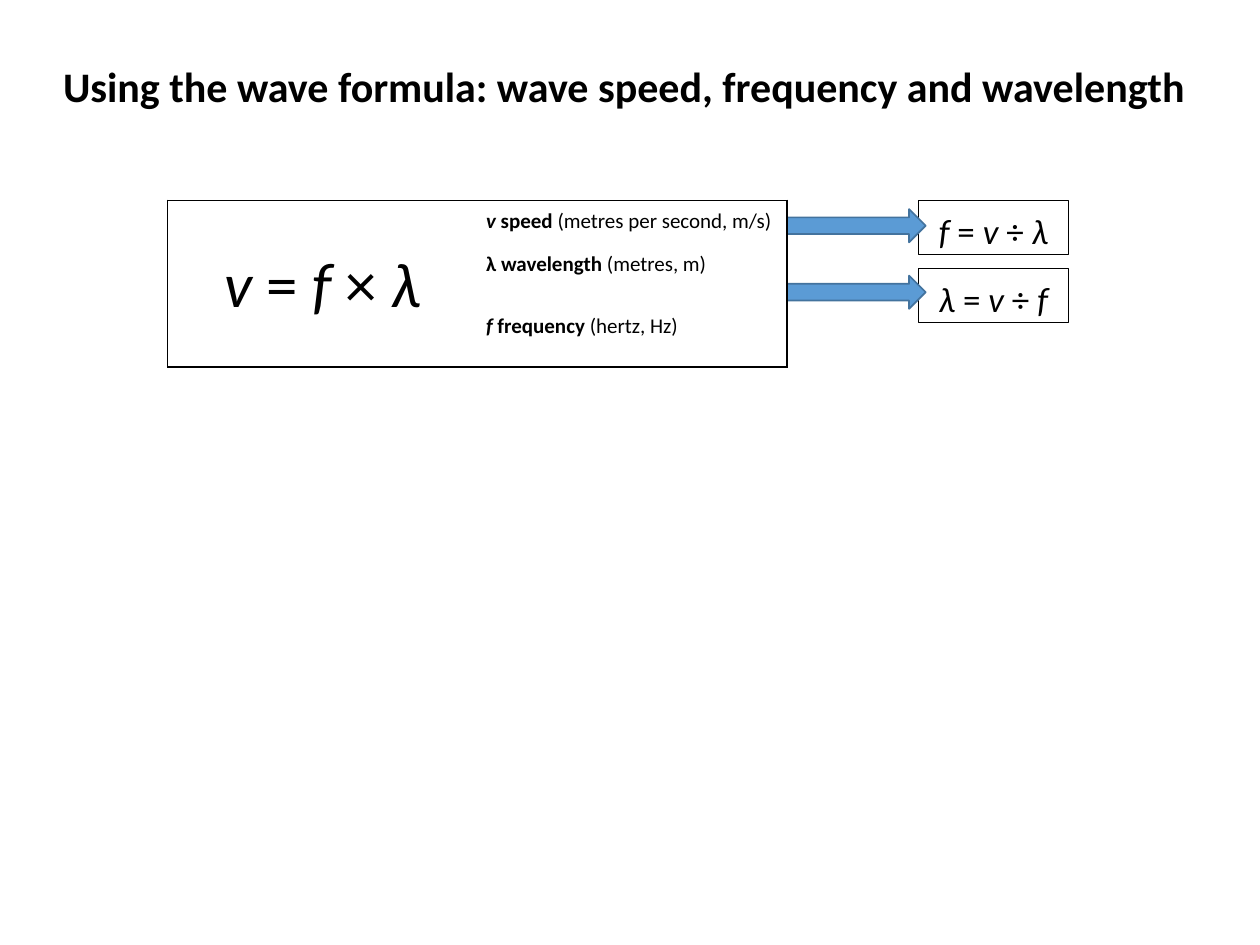
from dataclasses import dataclass

from lxml import etree
from pptx import Presentation
from pptx.dml.color import RGBColor
from pptx.enum.shapes import MSO_SHAPE
from pptx.enum.text import MSO_ANCHOR, MSO_AUTO_SIZE, PP_ALIGN
from pptx.oxml.ns import qn
from pptx.util import Pt

RECT, ARROW = MSO_SHAPE.RECTANGLE, MSO_SHAPE.RIGHT_ARROW
LEFT, CENTER = PP_ALIGN.LEFT, PP_ALIGN.CENTER
TOP, MIDDLE = MSO_ANCHOR.TOP, MSO_ANCHOR.MIDDLE

BLACK = RGBColor(0x00, 0x00, 0x00)
WHITE = RGBColor(0xFF, 0xFF, 0xFF)
BLUE = RGBColor(0x5B, 0x9B, 0xD5)
DARK_BLUE = RGBColor(0x43, 0x73, 0x9E)
FONT = "Calibri"

TABLE_LEFT, TABLE_TOP = 95.8, 114.5
COLUMN_WIDTH, ROW_HEIGHT = 177, 24.5


@dataclass
class Run:
    text: str
    italic: bool = False
    bold: bool = False


@dataclass
class Rearrangement:
    """A rearranged formula in a box, with the arrow that leads to it."""
    runs: list[Run]
    box_top: float
    arrow_top: float


REARRANGEMENTS = [
    Rearrangement([Run("f", True), Run(" = "), Run("v", True), Run(" ÷ "), Run("λ", True)],
                  114.5, 119.5),
    Rearrangement([Run("λ ", True), Run("= "), Run("v", True), Run(" ÷ "), Run("f", True)],
                  153.5, 157.5),
]
FORMULA = [Run("v", True), Run(" = "), Run("f ", True), Run("× "), Run("λ", True)]
QUANTITIES = [
    [Run("v", True, True), Run(" speed ", bold=True), Run("(metres per second, m/s)")],
    [Run("λ wavelength ", bold=True), Run("(metres, m)")],
    [Run("f", True, True), Run(" frequency ", bold=True), Run("(hertz, Hz)")],
]


def write(tf, runs: list[Run], size: float, align=LEFT, spacing: float = 1.0) -> None:
    p = tf.paragraphs[0]
    p.alignment, p.line_spacing = align, spacing
    p.font.name, p.font.size = FONT, Pt(size)
    p.font.color.rgb = BLACK
    for run in runs:
        r = p.add_run()
        r.text, r.font.italic, r.font.bold = run.text, run.italic, run.bold


def add_preset(s, preset, left: float, top: float, width: float, height: float,
               fill: RGBColor, line: RGBColor, weight: float):
    sp = s.shapes.add_shape(preset, Pt(left), Pt(top), Pt(width), Pt(height))
    sp.shadow.inherit = False
    sp.fill.solid()
    sp.fill.fore_color.rgb = fill
    sp.line.color.rgb = line
    sp.line.width = Pt(weight)
    return sp


def add_formula_box(s, item: Rearrangement) -> None:
    sp = add_preset(s, RECT, 525, item.box_top, 85.5, 31, WHITE, BLACK, 0.5)
    sp.text_frame.vertical_anchor = TOP
    write(sp.text_frame, item.runs, 20, CENTER, 1.07)
    sp.text_frame.paragraphs[0].space_after = Pt(8)


def set_borders(cell, sides: str) -> None:
    """Draw the named sides (of "LRTB") in black and leave the others bare."""
    tc_pr = cell._tc.get_or_add_tcPr()
    for side in "LRTB":
        ln = etree.SubElement(tc_pr, qn(f"a:ln{side}"), w=str(Pt(1)))
        if side in sides:
            fill = etree.SubElement(ln, qn("a:solidFill"))
            etree.SubElement(fill, qn("a:srgbClr"), val=str(BLACK))
        else:
            etree.SubElement(ln, qn("a:noFill"))


def add_formula_table(s) -> None:
    rows = len(QUANTITIES)
    table = s.shapes.add_table(rows, 2, Pt(TABLE_LEFT), Pt(TABLE_TOP),
                               Pt(2 * COLUMN_WIDTH), Pt(rows * ROW_HEIGHT)).table
    table.first_row = table.horz_banding = False
    for column in table.columns:
        column.width = Pt(COLUMN_WIDTH)
    table.cell(0, 0).merge(table.cell(rows - 1, 0))
    for i, quantity in enumerate(QUANTITIES):
        table.rows[i].height = Pt(ROW_HEIGHT)
        ends = ("T" if i == 0 else "") + ("B" if i == rows - 1 else "")
        for j, sides in enumerate(("LTB" if i == 0 else "L" + ends, "R" + ends)):
            cell = table.cell(i, j)
            set_borders(cell, sides)
            cell.fill.background()
            cell.vertical_anchor = MIDDLE
            cell.margin_left = cell.margin_right = Pt(5)
            cell.margin_top = cell.margin_bottom = 0
        write(table.cell(i, 1).text_frame, quantity, 12)
    write(table.cell(0, 0).text_frame, FORMULA, 36, CENTER, 1.07)


def add_title(s) -> None:
    title = s.shapes.title
    title.left, title.top, title.width, title.height = Pt(28.8), Pt(31), Pt(662.4), Pt(36)
    tf = title.text_frame
    tf.word_wrap = False
    tf.auto_size = MSO_AUTO_SIZE.SHAPE_TO_FIT_TEXT
    tf.vertical_anchor = TOP
    write(tf, [Run("Using the wave formula: wave speed, frequency and wavelength", bold=True)], 24)


def main() -> None:
    prs = Presentation()
    prs.slide_width, prs.slide_height = Pt(720), Pt(540)
    s = prs.slides.add_slide(prs.slide_layouts[5])
    add_title(s)
    for item in REARRANGEMENTS:
        add_formula_box(s, item)
    for item in REARRANGEMENTS:
        add_preset(s, ARROW, TABLE_LEFT + 2 * COLUMN_WIDTH, item.arrow_top, 79.2, 19,
                   BLUE, DARK_BLUE, 1)
    add_formula_table(s)
    prs.save("out.pptx")


if __name__ == "__main__":
    main()
